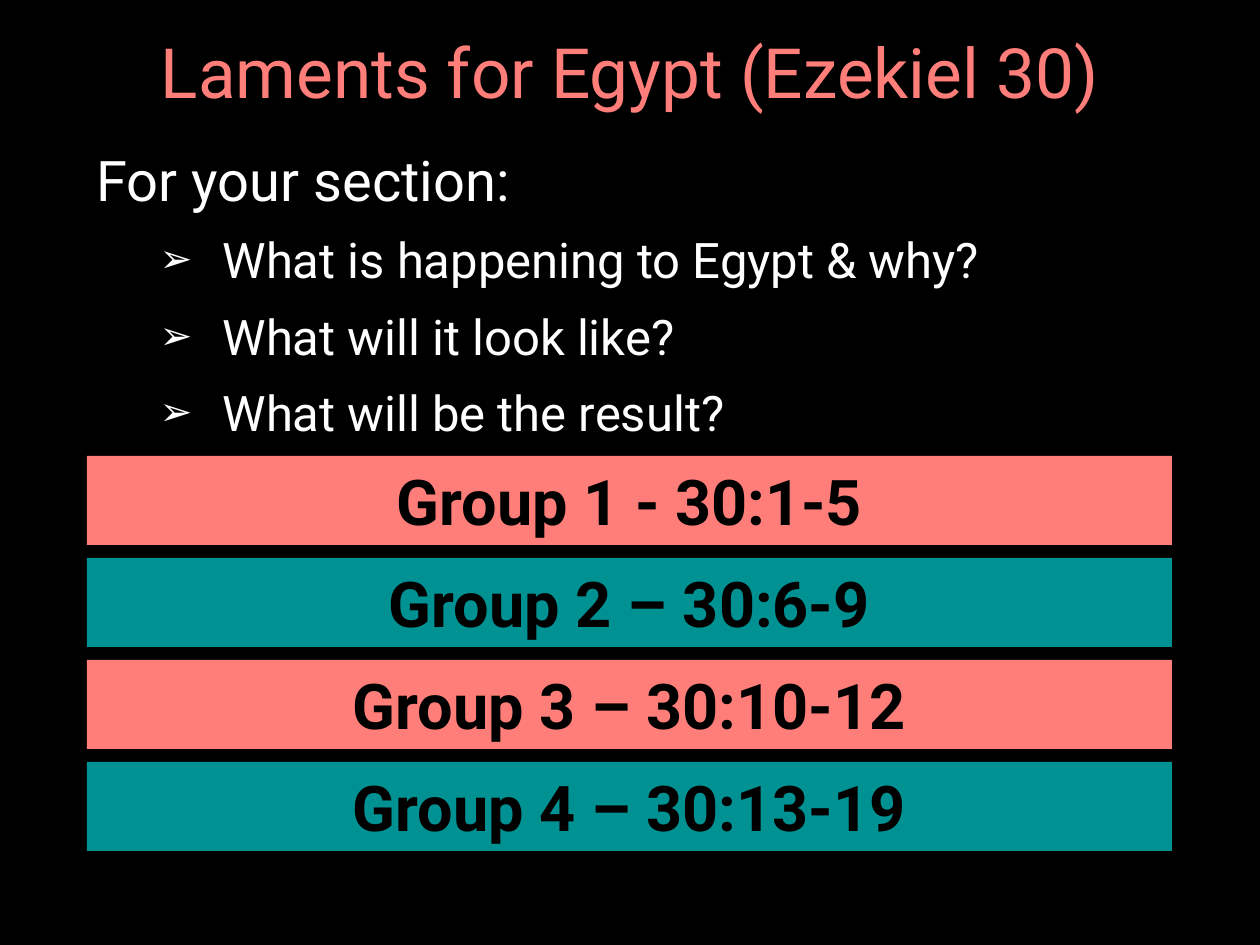
from typing import NamedTuple

from lxml.etree import SubElement
from pptx import Presentation
from pptx.dml.color import RGBColor
from pptx.enum.shapes import MSO_SHAPE
from pptx.enum.text import MSO_ANCHOR, MSO_AUTO_SIZE, PP_ALIGN
from pptx.oxml.ns import qn
from pptx.util import Emu, Pt

CORAL, TEAL, BLACK, WHITE = "FF7E79", "009193", "000000", "FFFFFF"
FONT = "Roboto"


class Box(NamedTuple):
    left: int
    top: int
    width: int
    height: int


class Bar(NamedTuple):
    text: str
    fill: str


BARS = [
    Bar("Group 1 - 30:1-5", CORAL),
    Bar("Group 2 – 30:6-9", TEAL),
    Bar("Group 3 – 30:10-12", CORAL),
    Bar("Group 4 – 30:13-19", TEAL),
]
FIRST_BAR = Box(87, 456, 1085, 89)
BAR_STEP = 102
QUESTIONS = [
    "What is happening to Egypt & why?",
    "What will it look like?",
    "What will be the result?",
]


def px(count: int) -> Emu:
    return Emu(round(count * 914400 / 126))


def color(code: str) -> RGBColor:
    return RGBColor.from_string(code)


def place(shape, box: Box) -> None:
    shape.left, shape.top, shape.width, shape.height = map(px, box)


def add_run(para, text: str, size: float, code: str, bold: bool = False) -> None:
    run = para.add_run()
    run.text = text
    run.font.name = FONT
    run.font.size = Pt(size)
    run.font.bold = bold
    run.font.color.rgb = color(code)


def set_bullet(para, char: str | None, left: int, hang: int) -> None:
    """Set the indent and bullet mark; None as char means no bullet."""
    props = para._p.get_or_add_pPr()
    props.set("marL", str(px(left)))
    props.set("indent", str(-px(hang)))
    if char is None:
        SubElement(props, qn("a:buNone"))
    else:
        SubElement(props, qn("a:buSzPct"), val="80000")
        SubElement(props, qn("a:buChar"), char=char)


def fill_title(title) -> None:
    place(title, Box(87, 20, 1086, 113))
    frame = title.text_frame
    frame.auto_size = MSO_AUTO_SIZE.NONE
    frame.vertical_anchor = MSO_ANCHOR.MIDDLE
    para = frame.paragraphs[0]
    para.alignment = PP_ALIGN.CENTER
    para.line_spacing = 0.9
    add_run(para, "Laments for Egypt (Ezekiel 30)", 39.6, CORAL)


def fill_body(body) -> None:
    place(body, Box(84, 132, 1086, 722))
    frame = body.text_frame
    frame.auto_size = MSO_AUTO_SIZE.NONE
    frame.margin_top = px(13)
    intro = frame.paragraphs[0]
    set_bullet(intro, None, 0, 0)
    intro.space_before, intro.space_after = Pt(0), Pt(6)
    add_run(intro, "For your section:", 32, WHITE)
    for text in QUESTIONS:
        para = frame.add_paragraph()
        para.level = 1
        set_bullet(para, "➢", 126, 63)
        para.space_before, para.space_after = Pt(4), Pt(6)
        add_run(para, text, 28, WHITE)


def add_bar(slide, bar: Bar, box: Box) -> None:
    shape = slide.shapes.add_shape(MSO_SHAPE.RECTANGLE, *map(px, box))
    shape.shadow.inherit = False
    shape.fill.solid()
    shape.fill.fore_color.rgb = color(bar.fill)
    shape.line.fill.background()
    frame = shape.text_frame
    frame.word_wrap = True
    frame.auto_size = MSO_AUTO_SIZE.SHAPE_TO_FIT_TEXT
    para = frame.paragraphs[0]
    para.alignment = PP_ALIGN.CENTER
    add_run(para, bar.text, 36, BLACK, bold=True)


def main() -> None:
    deck = Presentation()
    deck.slide_width, deck.slide_height = px(1260), px(945)
    slide = deck.slides.add_slide(deck.slide_layouts[1])
    slide.background.fill.solid()
    slide.background.fill.fore_color.rgb = color(BLACK)
    fill_title(slide.shapes.title)
    fill_body(slide.placeholders[1])
    for row, bar in enumerate(BARS):
        add_bar(slide, bar, FIRST_BAR._replace(top=FIRST_BAR.top + row * BAR_STEP))
    deck.save("out.pptx")


if __name__ == "__main__":
    main()
